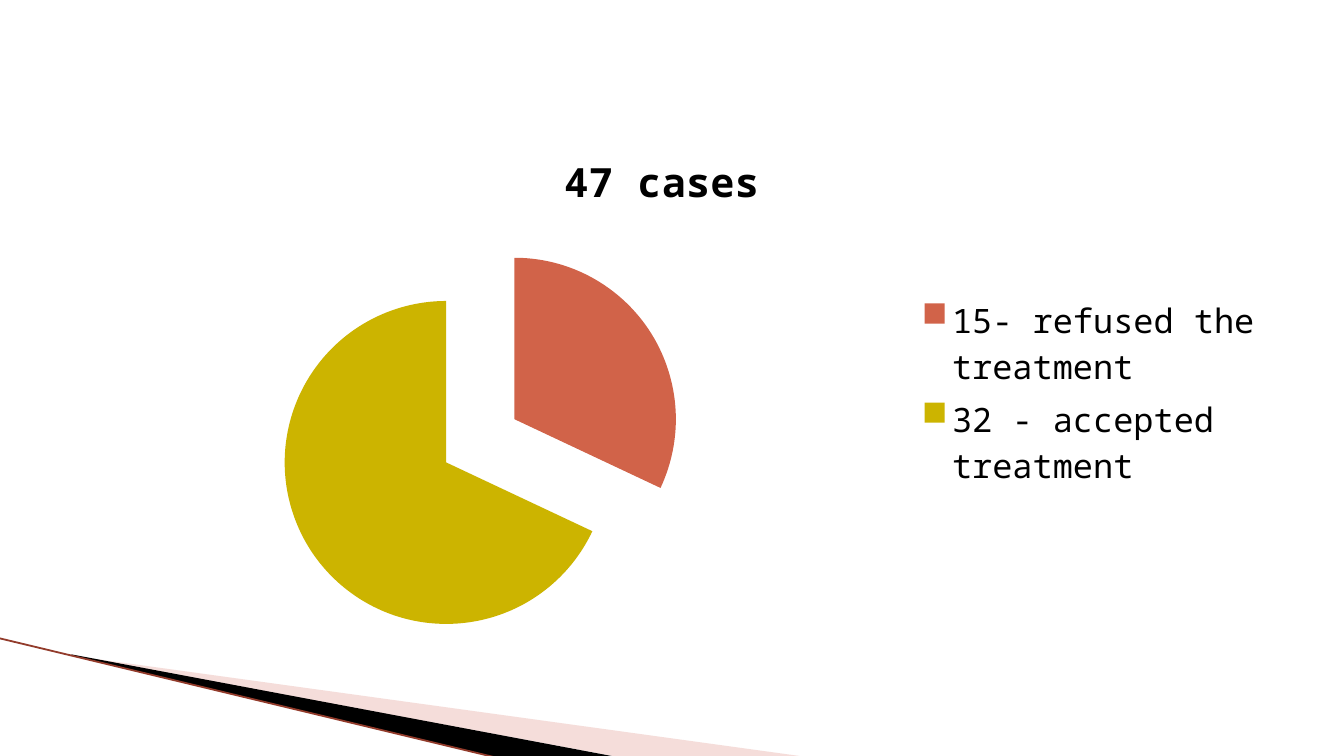
from lxml import etree
from pptx import Presentation
from pptx import util as u
from pptx.chart import data as cd
from pptx.dml import color as dc
from pptx.enum import chart as ce
from pptx.oxml import ns

Cm = u.Cm
HUES = {"pale": "E7ACA4", "black": "000000", "edge": "923B2B",
        "red": "D16349", "gold": "CCB400"}
FACE = {"name": "Noto Sans Mono", "size": u.Pt(18), "bold": False}
HEAD = {"name": "Noto Sans Mono", "size": u.Pt(21.6), "bold": True}
KEY = {"position": ce.XL_LEGEND_POSITION.RIGHT, "include_in_layout": False}
CASES = [("15- refused the treatment", 32, "red"),
         ("32 - accepted treatment", 68, "gold")]
PALE = [(1.4, 0.34), (15.11, 2.23), (11.58, 2.23)]
DARK = [(1.35, 0.31), (11.61, 2.24), (9.45, 2.27), (1.37, 0.34)]
EDGE = [(-0.03, 0), (9.42, 2.27)]


def hue(name):
    return dc.RGBColor.from_string(HUES[name])


def paint(fill, name):
    fill.solid()
    fill.fore_color.rgb = hue(name)


def style(item, form):
    for key, val in form.items():
        setattr(item, key, val)


def sweep(slide, left, top):
    def spot(point):
        return Cm(left + point[0]), Cm(top + point[1])

    for points, name in ((PALE, "pale"), (DARK, "black")):
        pen = slide.shapes.build_freeform(*spot(points[0]), scale=1.0)
        pen.add_line_segments([spot(p) for p in points[1:]], close=True)
        wedge = pen.convert_to_shape()
        wedge.shadow.inherit = False
        paint(wedge.fill, name)
        wedge.line.fill.background()
        if name == "pale":
            tint = wedge.fill._xPr.find(".//" + ns.qn("a:srgbClr"))
            etree.SubElement(tint, ns.qn("a:alpha"), val="40000")

    edge = slide.shapes.add_connector(1, *spot(EDGE[0]), *spot(EDGE[1]))
    edge.line.width = u.Pt(0.95)
    paint(edge.line.fill, "edge")
    etree.SubElement(edge._element.spPr, ns.qn("a:effectLst"))


def pie(slide, left, top, width, height):
    data = cd.CategoryChartData()
    data.categories = [case[0] for case in CASES]
    data.add_series("47 cases", [case[1] for case in CASES])
    chart = slide.shapes.add_chart(
        ce.XL_CHART_TYPE.PIE, Cm(left), Cm(top), Cm(width), Cm(height),
        data).chart
    style(chart.font, FACE)
    chart.font.color.rgb = hue("black")

    chart.has_title = True
    frame = chart.chart_title.text_frame
    frame.text = "47 cases"
    font = frame.paragraphs[0].runs[0].font
    style(font, HEAD)
    font.color.rgb = hue("black")
    chart.has_legend = True
    style(chart.legend, KEY)

    plot = chart.plots[0]
    plot.vary_by_categories = True
    series = plot.series[0]
    for i, case in enumerate(CASES):
        slice_ = series.points[i].format
        paint(slice_.fill, case[2])
        slice_.line.fill.background()
    burst = etree.Element(ns.qn("c:explosion"), val="25")
    series._element.find(ns.qn("c:dPt")).addprevious(burst)


def main():
    deck = Presentation()
    style(deck, {"slide_width": Cm(25.4), "slide_height": Cm(14.29)})
    slide = deck.slides.add_slide(deck.slide_layouts[6])
    sweep(slide, 0, 12.06)
    pie(slide, 0.89, 2.34, 23.24, 10.16)
    deck.save("out.pptx")


if __name__ == "__main__":
    main()
